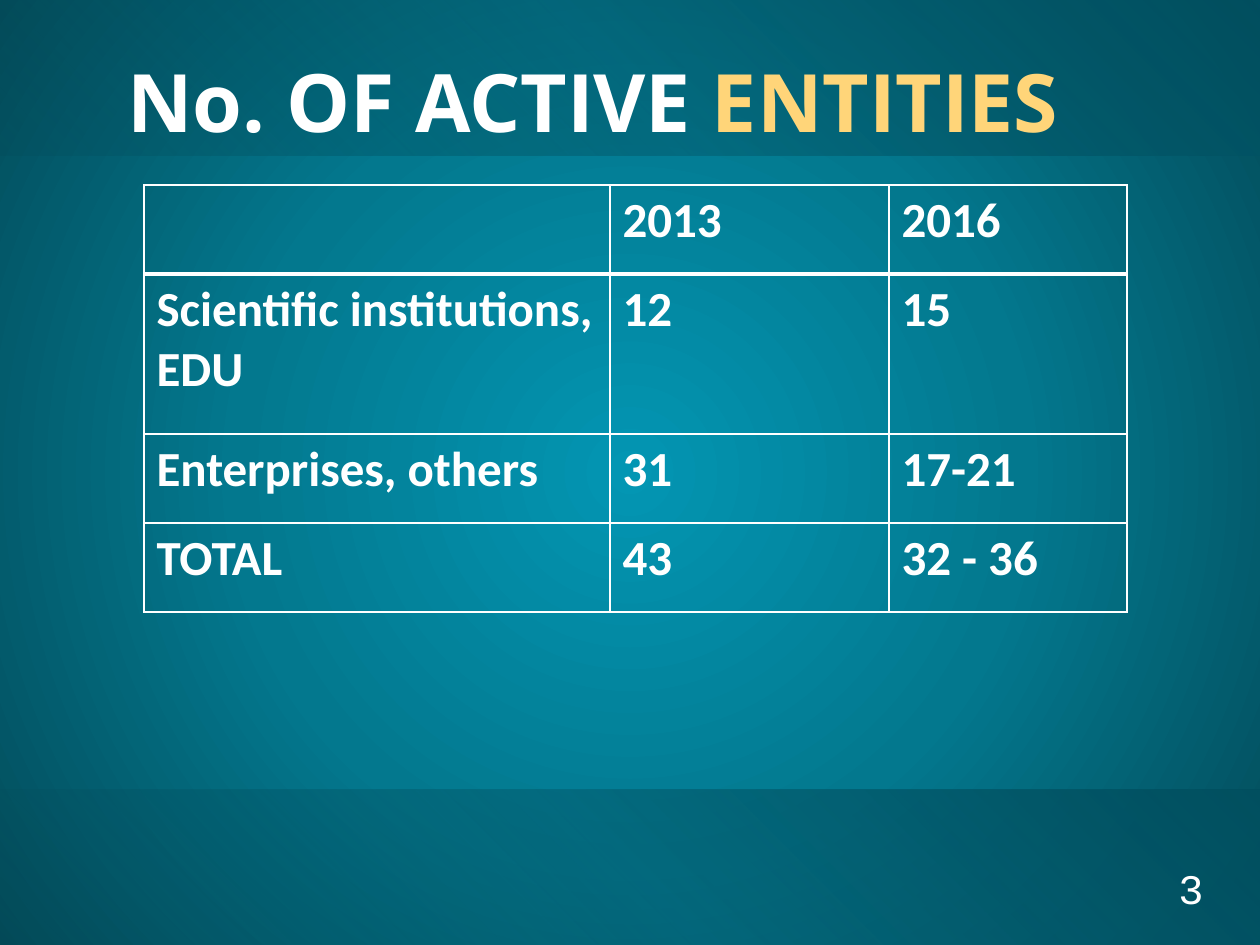
from dataclasses import dataclass

from lxml import etree
from pptx import Presentation
from pptx import util as u
from pptx.dml.color import RGBColor
from pptx.enum import shapes, text
from pptx.oxml import parse_xml
from pptx.oxml.ns import qn

WIDTH, HEIGHT = 1260, 945
BAND_HEIGHT = 155
A_NS = "http://schemas.openxmlformats.org/drawingml/2006/main"


@dataclass(frozen=True)
class Theme:
    white: str = "FFFFFF"
    accent: str = "FFD579"
    # Gradient stops: position %, colour, opacity %
    backdrop: tuple = ((0, "0396B3", 100), (50, "03788E", 100), (100, "034A58", 100))
    band: tuple = ((0, "014F5F", 100), (50, "036174", 64), (100, "034A58", 22))
    title_font: str = "Open Sans"
    table_font: str = "Calibri"
    number_font: str = "Courier New"
    title_size: int = 46
    table_size: int = 28
    number_size: int = 24
    rule: int = 1
    header_rule: int = 3


THEME = Theme()


def px(length):
    return u.Emu(round(length * 914400 / 126))


def box_emu(box):
    return [px(length) for length in box]


def style(run, font, size, colour, bold=False):
    run.font.name = font
    run.font.size = u.Pt(size)
    run.font.bold = bold
    run.font.color.rgb = RGBColor.from_string(colour)


def set_radial_fill(fill, owner, stops, focus):
    """Give owner a circular gradient; focus is its left, top, right, bottom in %."""
    fill.gradient()
    linear = next(owner.iter(qn("a:gradFill")))
    stop_xml = "".join(
        f'<a:gs pos="{pos * 1000}"><a:srgbClr val="{colour}">'
        f'<a:alpha val="{opacity * 1000}"/></a:srgbClr></a:gs>'
        for pos, colour, opacity in stops)
    left, top, right, bottom = (side * 1000 for side in focus)
    radial = parse_xml(
        f'<a:gradFill xmlns:a="{A_NS}" rotWithShape="1"><a:gsLst>{stop_xml}</a:gsLst>'
        f'<a:path path="circle"><a:fillToRect l="{left}" t="{top}" r="{right}" '
        f'b="{bottom}"/></a:path></a:gradFill>')
    linear.getparent().replace(linear, radial)


def add_band(slide, box):
    band = slide.shapes.add_shape(shapes.MSO_SHAPE.RECTANGLE, *box_emu(box))
    band.shadow.inherit = False
    band.line.fill.background()
    set_radial_fill(band.fill, band._element, THEME.band, (100, 0, 0, 100))


def add_title(slide, box, parts):
    """Write a title from (words, colour) parts."""
    frame = slide.shapes.add_textbox(*box_emu(box)).text_frame
    frame.word_wrap = True
    frame.auto_size = text.MSO_AUTO_SIZE.SHAPE_TO_FIT_TEXT
    frame.vertical_anchor = text.MSO_ANCHOR.MIDDLE
    for words, colour in parts:
        run = frame.paragraphs[0].add_run()
        run.text = words
        style(run, THEME.title_font, THEME.title_size, colour, bold=True)


def add_page_number(slide, box, number):
    frame = slide.shapes.add_textbox(*box_emu(box)).text_frame
    frame.word_wrap = False
    frame.auto_size = text.MSO_AUTO_SIZE.SHAPE_TO_FIT_TEXT
    frame.text = number
    line = frame.paragraphs[0]
    line.alignment = text.PP_ALIGN.RIGHT
    line.space_after = u.Pt(12)
    style(line.runs[0], THEME.number_font, THEME.number_size, THEME.white)


def set_borders(cell, widths):
    """Draw the cell's sides; widths maps L, R, T, B to points."""
    properties = cell._tc.get_or_add_tcPr()
    for place, side in enumerate("LRTB"):
        border = etree.Element(qn(f"a:ln{side}"), w=str(u.Pt(widths[side])))
        fill = etree.SubElement(border, qn("a:solidFill"))
        etree.SubElement(fill, qn("a:srgbClr"), val=THEME.white)
        properties.insert(place, border)


def add_entity_table(slide, left, top, widths, heights, rows):
    box = (left, top, sum(widths), sum(heights))
    table = slide.shapes.add_table(len(rows), len(widths), *box_emu(box)).table
    table.first_row = table.horz_banding = False
    for column, width in zip(table.columns, widths):
        column.width = px(width)
    for r, (row, height) in enumerate(zip(rows, heights)):
        table.rows[r].height = px(height)
        above = THEME.header_rule if r == 1 else THEME.rule
        below = THEME.header_rule if r == 0 else THEME.rule
        for c, words in enumerate(row):
            cell = table.cell(r, c)
            cell.fill.background()
            set_borders(cell, {"L": THEME.rule, "R": THEME.rule, "T": above, "B": below})
            cell.text = words
            for run in cell.text_frame.paragraphs[0].runs:
                style(run, THEME.table_font, THEME.table_size, THEME.white, bold=True)


def build_entities_slide(deck):
    slide = deck.slides.add_slide(deck.slide_layouts[6])
    set_radial_fill(slide.background.fill, slide._element, THEME.backdrop, (50, 50, 50, 50))
    for top in (HEIGHT - BAND_HEIGHT, 0):
        add_band(slide, (0, top, WIDTH, BAND_HEIGHT))
    add_title(slide, (115, 45, 1068, 111),
              [("No. OF ACTIVE ", THEME.white), ("ENTITIES", THEME.accent)])
    add_page_number(slide, (1166, 856, 50, 63), "3")
    add_entity_table(slide, 144, 185, (466, 279, 238), (89, 160, 89, 89), [
        ("", "2013", "2016"),
        ("Scientific institutions, EDU", "12", "15"),
        ("Enterprises, others", "31", "17-21"),
        ("TOTAL", "43", "32 - 36"),
    ])


def main():
    deck = Presentation()
    deck.slide_width, deck.slide_height = px(WIDTH), px(HEIGHT)
    build_entities_slide(deck)
    deck.save("out.pptx")


if __name__ == "__main__":
    main()
